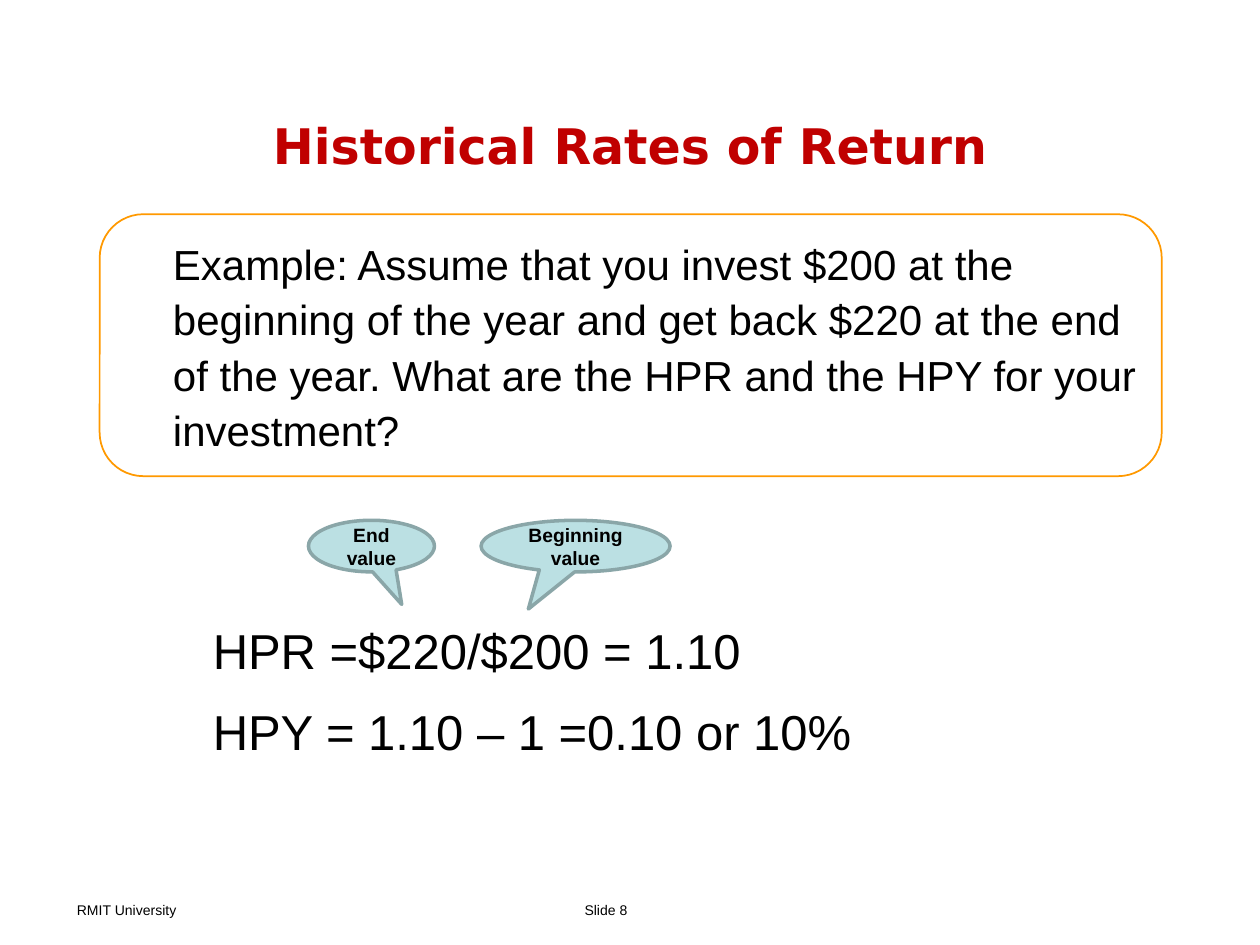
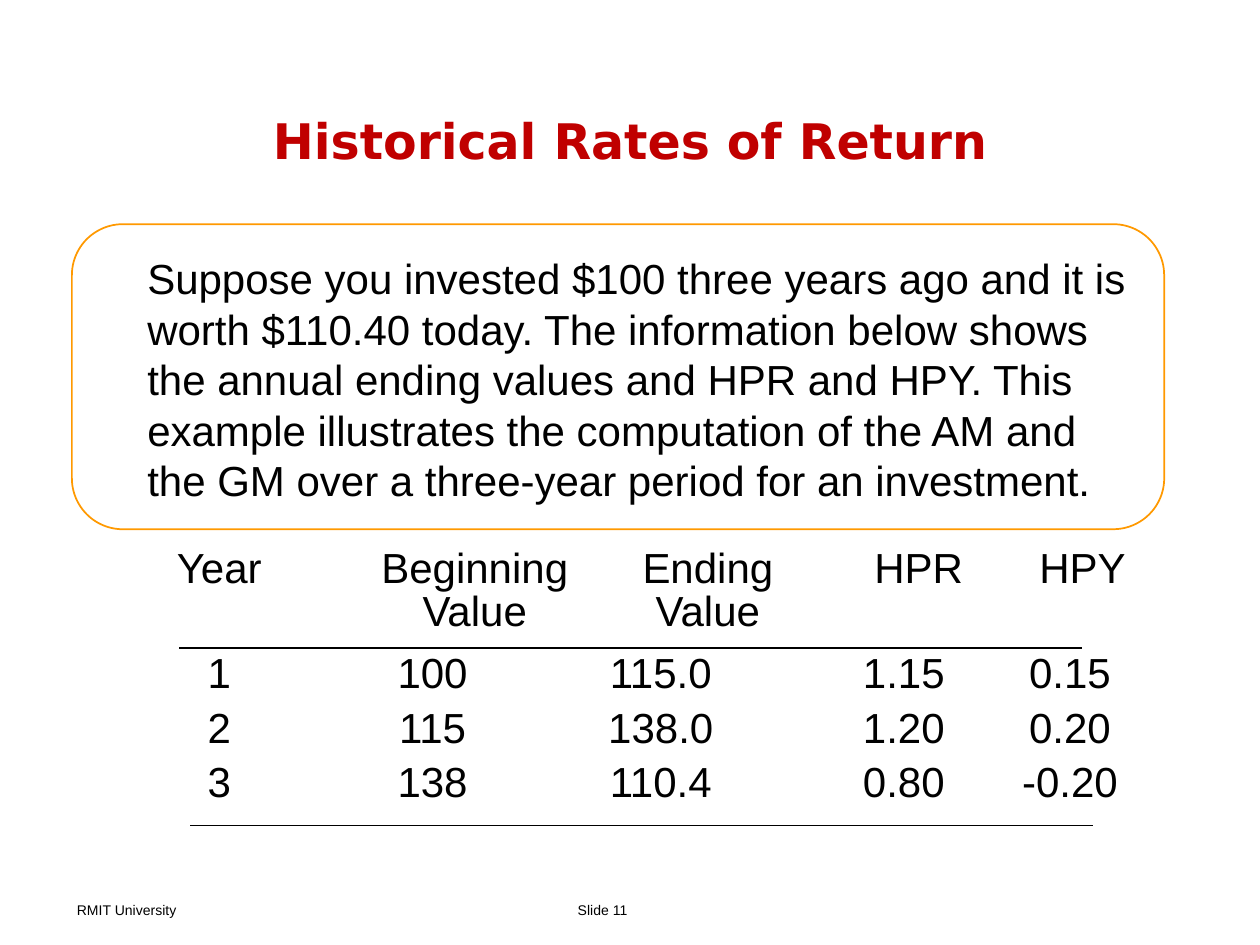
"""Build two slides on historical rates of return."""
from lxml.etree import SubElement
from pptx import Presentation
from pptx.dml.color import RGBColor
from pptx.enum.shapes import MSO_CONNECTOR as Line, MSO_SHAPE as Preset
from pptx.enum.text import MSO_ANCHOR as Anchor, PP_ALIGN as Align
from pptx.oxml.ns import qn
from pptx.util import Cm, Pt

COLORS = {
    "ink": "000000",
    "title": "C00000",
    "frame": "FF9900",
    "callout": "BBE0E3",
    "callout_edge": "8AA6A8",
}


def color(name):
    """Return the named colour."""
    return RGBColor.from_string(COLORS[name])


def write(frame, text, size=24, font="Arial", ink="ink", bold=False,
          align=Align.LEFT, anchor=Anchor.TOP, spacing=1.0, before=0,
          margins=(0.25, 0.13, 0.25, 0.13)):
    """Fill a text frame or table cell, one paragraph per line of text."""
    frame.vertical_anchor = anchor
    frame.word_wrap = True
    sides = ("left", "top", "right", "bottom")
    for side, margin in zip(sides, margins):
        setattr(frame, f"margin_{side}", Cm(margin))
    body = getattr(frame, "text_frame", frame)
    body.text = text
    for index, paragraph in enumerate(body.paragraphs):
        paragraph.alignment = align
        paragraph.line_spacing = spacing
        paragraph.space_before = Pt(before if index else 0)
        paragraph.font.size = Pt(size)
        paragraph.font.name = font
        paragraph.font.bold = bold
        paragraph.font.color.rgb = color(ink)


class Deck:
    """Hold the shared style and the current slide."""

    def __init__(self):
        """Start an empty 4:3 presentation."""
        self.show = Presentation()
        self.show.slide_width, self.show.slide_height = Cm(25.4), Cm(19.05)
        self.slide = None

    def new_slide(self, title, number, title_height):
        """Add a slide with its title and footers."""
        self.slide = self.show.slides.add_slide(self.show.slide_layouts[6])
        self.text(title, (1.27, 1.52, 22.86, title_height), size=28,
                  font="DejaVu Sans", ink="title", bold=True,
                  align=Align.CENTER, anchor=Anchor.MIDDLE)
        self.text("RMIT University", (1.3, 17.73, 8, 0.91), size=8,
                  anchor=Anchor.BOTTOM)
        self.text(f"Slide {number}", (9.3, 17.73, 3.6, 0.91), size=8,
                  align=Align.RIGHT, anchor=Anchor.BOTTOM)

    def text(self, text, place, **style):
        """Add a text box."""
        box = self.slide.shapes.add_textbox(*map(Cm, place))
        write(box.text_frame, text, **style)

    def shape(self, preset, text, place, adjustments, edge, width,
              fill=None, **style):
        """Add an outlined preset shape with text."""
        shape = self.slide.shapes.add_shape(preset, *map(Cm, place))
        shape.shadow.inherit = False
        for index, value in enumerate(adjustments):
            shape.adjustments[index] = value
        if fill:
            shape.fill.solid()
            shape.fill.fore_color.rgb = color(fill)
        else:
            shape.fill.background()
        shape.line.color.rgb = color(edge)
        shape.line.width = Pt(width)
        write(shape.text_frame, text, **style)

    def question(self, text, place, top, spacing=1.0):
        """Add a rounded frame that holds an example."""
        self.shape(Preset.ROUNDED_RECTANGLE, text, place, (0.167,), "frame",
                   1, spacing=spacing, margins=(1.22, top, 0.25, 0.13))

    def callout(self, text, left, width, tip):
        """Add an oval callout whose tip points at a value."""
        self.shape(Preset.OVAL_CALLOUT, text, (left, 10.49, width, 1.04), tip,
                   "callout_edge", 2, fill="callout", size=11, bold=True,
                   align=Align.CENTER, anchor=Anchor.MIDDLE)

    def rule(self, left, top, width):
        """Add a thin horizontal line."""
        rule = self.slide.shapes.add_connector(
            Line.STRAIGHT, Cm(left), Cm(top), Cm(left + width), Cm(top))
        rule.line.color.rgb = color("ink")
        rule.line.width = Pt(0.75)
        SubElement(rule._element.spPr, qn("a:effectLst"))

    def table(self, rows, left, top, widths, heights, value_insets):
        """Add a plain table; insets shift the values left of their heads."""
        place = map(Cm, (left, top, sum(widths), sum(heights)))
        table = self.slide.shapes.add_table(
            len(rows), len(widths), *place).table
        table.first_row = table.horz_banding = False
        for column, width in zip(table.columns, widths):
            column.width = Cm(width)
        for r, (row, height) in enumerate(zip(rows, heights)):
            table.rows[r].height = Cm(height)
            for c, (text, inset) in enumerate(zip(row, value_insets)):
                cell = table.cell(r, c)
                cell.fill.background()
                write(cell, text, align=Align.CENTER,
                      spacing=1.0 if r else 0.92,
                      anchor=Anchor.MIDDLE if r else Anchor.TOP,
                      margins=(0, 0, inset if r else 0, 0))


def main():
    """Build and save the slides."""
    title = "Historical Rates of Return"
    deck = Deck()

    deck.new_slide(title, 8, 2.79)
    deck.question(
        "Example: Assume that you invest $200 at the beginning of the year "
        "and get back $220 at the end of the year. What are the HPR and the "
        "HPY for your investment?",
        (2.01, 4.32, 21.41, 5.28), top=0.13, spacing=1.1)
    deck.text("HPR =$220/$200 = 1.10\nHPY = 1.10 – 1 =0.10 or 10%",
              (4.04, 12.15, 19.86, 4), size=28, spacing=1.2, before=5.6)
    deck.callout("End value", 6.22, 2.54, (0.24, 1.13))
    deck.callout("Beginning value", 9.7, 3.81, (-0.25, 1.22))

    deck.new_slide(title, 11, 2.59)
    deck.question(
        "Suppose you invested $100 three years ago and it is worth $110.40 "
        "today. The information below shows the annual ending values and HPR "
        "and HPY. This example illustrates the computation of the AM and the "
        "GM over a three-year period for an investment.",
        (1.45, 4.52, 22.02, 6.15), top=0.28)
    returns = [
        ("Year", "Beginning\nValue", "Ending\nValue", "HPR", "HPY"),
        ("1", "100", "115.0", "1.15", "0.15"),
        ("2", "115", "138.0", "1.20", "0.20"),
        ("3", "138", "110.4", "0.80", "-0.20"),
    ]
    deck.table(returns, 1.52, 11.07, widths=(5.8, 4.5, 4.9, 3.6, 3),
               heights=(1.98, 1.09, 1.09, 1.09),
               value_insets=(0, 1.7, 1.9, 0.6, 0.5))
    deck.rule(3.61, 13.06, 18.2)
    deck.rule(3.84, 16.64, 18.2)

    deck.show.save("out.pptx")


if __name__ == "__main__":
    main()
